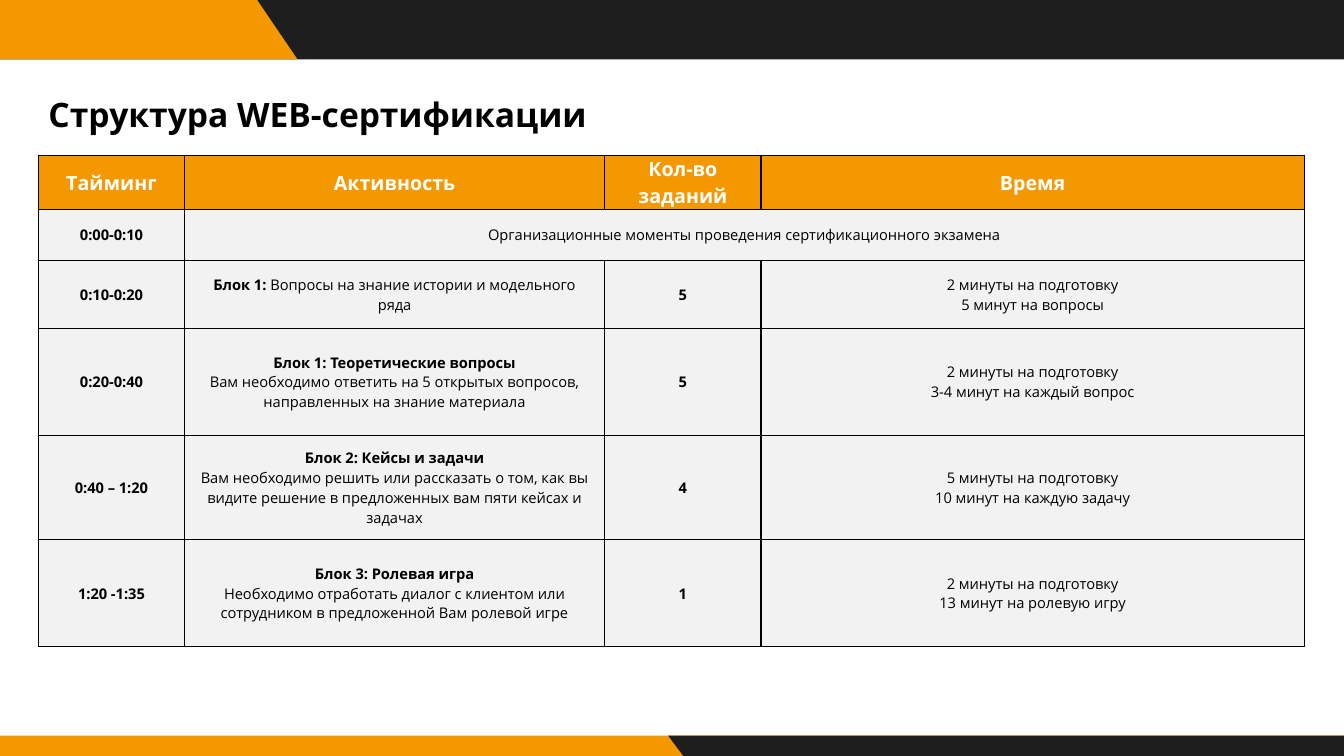
from lxml.etree import SubElement
from pptx import Presentation
from pptx.dml.color import RGBColor
from pptx.enum.shapes import MSO_SHAPE
from pptx.enum.text import MSO_ANCHOR, PP_ALIGN
from pptx.oxml.ns import qn
from pptx.util import Cm, Pt

COLORS = {"orange": "F39800", "dark": "1E1E1E", "row": "F2F2F2",
          "black": "000000", "white": "FFFFFF"}
FONT = "Open Sans"
WIDTH, HEIGHT = 33.87, 19.05


def style_run(run, size, color, bold):
    run.font.name = FONT
    run.font.size = Pt(size)
    run.font.bold = bold
    run.font.color.rgb = RGBColor.from_string(COLORS[color])


def fill_cell(cell, paragraphs, fill, size, color, inset):
    """Write paragraphs, each a list of (text, bold), and frame the cell."""
    cell.fill.solid()
    cell.fill.fore_color.rgb = RGBColor.from_string(COLORS[fill])
    cell.vertical_anchor = MSO_ANCHOR.MIDDLE
    cell.margin_left = cell.margin_right = Cm(inset)
    cell.margin_top = cell.margin_bottom = Cm(inset)
    cell.text_frame.text = "\n".join(parts[0][0] for parts in paragraphs)
    for paragraph, parts in zip(cell.text_frame.paragraphs, paragraphs):
        paragraph.alignment = PP_ALIGN.CENTER
        for text, bold in parts[1:]:
            paragraph.add_run().text = text
            style_run(paragraph.runs[-1], size, color, bold)
        first_part = paragraph.runs[:len(paragraph.runs) - len(parts) + 1]
        for run in first_part:
            style_run(run, size, color, parts[0][1])
    properties = cell._tc.get_or_add_tcPr()
    for index, side in enumerate(("a:lnL", "a:lnR", "a:lnT", "a:lnB")):
        border = SubElement(properties, qn(side), w=str(Pt(1)))
        line_fill = SubElement(border, qn("a:solidFill"))
        SubElement(line_fill, qn("a:srgbClr"), val=COLORS["black"])
        properties.insert(index, border)


prs = Presentation()
prs.slide_width, prs.slide_height = Cm(WIDTH), Cm(HEIGHT)
slide = prs.slides.add_slide(prs.slide_layouts[6])

# Top and bottom bands, each with a slanted overlay
bands = [
    (0, 1.5, "dark", "orange", [(0, 0), (6.48, 0), (7.5, 1.5), (0, 1.5)]),
    (18.54, 0.51, "orange", "dark",
     [(16.84, 18.54), (WIDTH, 18.54), (WIDTH, HEIGHT), (17.22, HEIGHT)]),
]
for top, height, band_color, slant_color, corners in bands:
    band = slide.shapes.add_shape(MSO_SHAPE.RECTANGLE, 0, Cm(top), Cm(WIDTH), Cm(height))
    points = [(Cm(x), Cm(y)) for x, y in corners]
    outline = slide.shapes.build_freeform(*points[0])
    outline.add_line_segments(points[1:], close=True)
    slant = outline.convert_to_shape()
    for part, color in ((band, band_color), (slant, slant_color)):
        part.shadow.inherit = False
        part.fill.solid()
        part.fill.fore_color.rgb = RGBColor.from_string(COLORS[color])
        part.line.fill.background()

# Title
title = slide.shapes.add_textbox(Cm(0.97), Cm(2.25), Cm(30), Cm(1.6))
title.text_frame.word_wrap = True
title.text_frame.text = "Структура WEB-сертификации"
style_run(title.text_frame.paragraphs[0].runs[0], 24, "black", True)

# Schedule: timing, activity, number of tasks, time allowed
headings = ["Тайминг", "Активность", "Кол-во\vзаданий", "Время"]
opening = ("0:00-0:10", "Организационные моменты проведения сертификационного экзамена")
blocks = [
    ("0:10-0:20",
     [[("Блок 1: ", True), ("Вопросы на знание истории и модельного ряда", False)]],
     "5", ["2 минуты на подготовку", "5 минут на вопросы"]),
    ("0:20-0:40",
     [[("Блок 1: Теоретические вопросы", True)],
      [("Вам необходимо ответить на 5 открытых вопросов, "
        "направленных на знание материала", False)]],
     "5", ["2 минуты на подготовку", "3-4 минут на каждый вопрос"]),
    ("0:40 – 1:20",
     [[("Блок 2: Кейсы и задачи", True)],
      [("Вам необходимо решить или рассказать о том, как вы видите решение "
        "в предложенных вам пяти кейсах и задачах", False)]],
     "4", ["5 минуты на подготовку", "10 минут на каждую задачу"]),
    ("1:20 -1:35",
     [[("Блок 3: Ролевая игра", True)],
      [("Необходимо отработать диалог с клиентом или сотрудником "
        "в предложенной Вам ролевой игре", False)]],
     "1", ["2 минуты на подготовку", "13 минут на ролевую игру"]),
]
column_widths = [3.68, 10.59, 3.94, 13.69]
row_heights = [1.36, 1.29, 1.71, 2.7, 2.62, 2.7]

schedule = slide.shapes.add_table(
    len(row_heights), len(column_widths), Cm(0.97), Cm(3.92),
    Cm(sum(column_widths)), Cm(sum(row_heights))).table
for column, width in zip(schedule.columns, column_widths):
    column.width = Cm(width)
for row, height in zip(schedule.rows, row_heights):
    row.height = Cm(height)

rows = [[[[(heading, True)]] for heading in headings],
        [[[(opening[0], True)]], [[(opening[1], False)]], [], []]]
for timing, activity, tasks, allowed in blocks:
    rows.append([[[(timing, True)]], activity, [[(tasks, True)]],
                 [[(line, False)] for line in allowed]])

schedule.cell(1, 1).merge(schedule.cell(1, 3))
for r, row in enumerate(rows):
    look = ("orange", 14, "white", 0) if r == 0 else ("row", 10.5, "black", 0.3)
    for c, paragraphs in enumerate(row):
        fill_cell(schedule.cell(r, c), paragraphs, *look)

prs.save("out.pptx")
